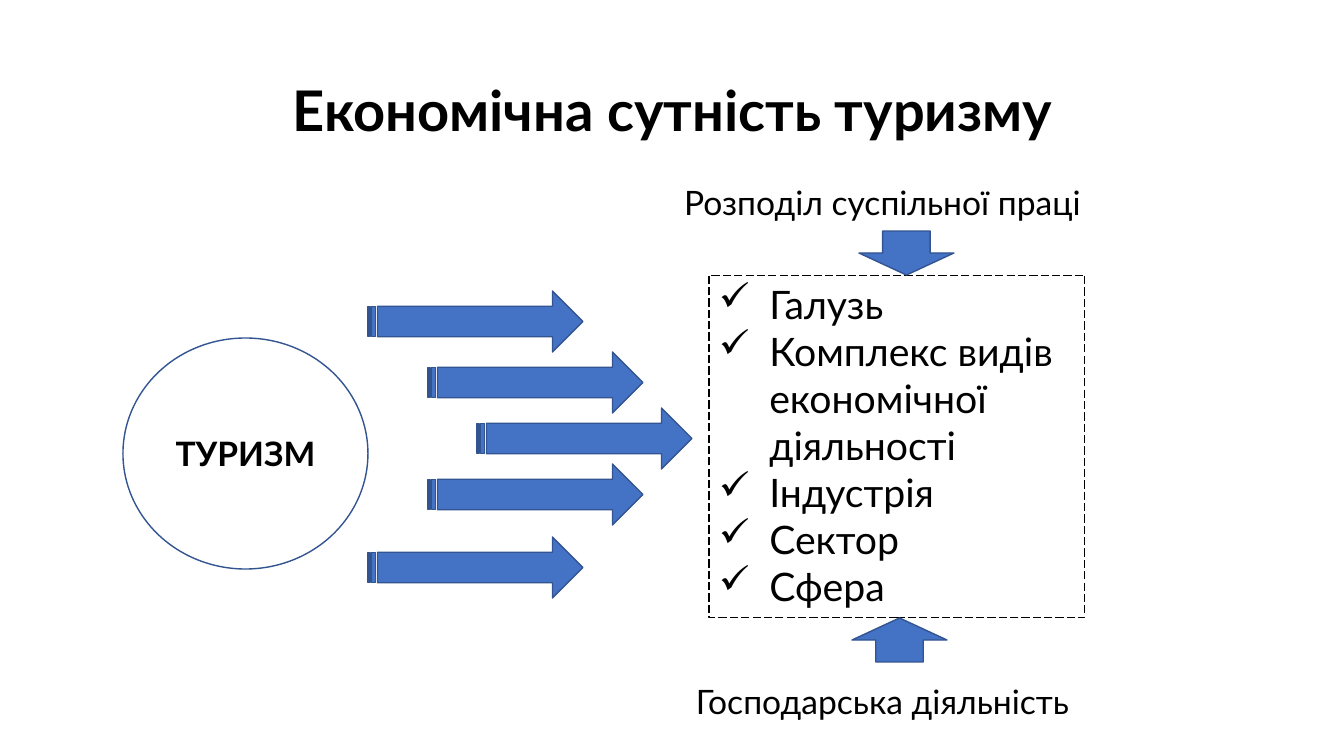
from lxml.etree import SubElement
from pptx import Presentation
from pptx.dml.color import RGBColor
from pptx.enum.dml import MSO_LINE
from pptx.enum.shapes import MSO_SHAPE as SHAPE
from pptx.enum.text import MSO_ANCHOR as ANCHOR, MSO_AUTO_SIZE as FIT, PP_ALIGN as ALIGN
from pptx.oxml.ns import qn
from pptx.util import Pt

PX = 914400 / 100.8
FONT = "Lato"
BLACK = RGBColor(0x00, 0x00, 0x00)
WHITE = RGBColor(0xFF, 0xFF, 0xFF)
BLUE = RGBColor(0x44, 0x72, 0xC4)
NAVY = RGBColor(0x32, 0x54, 0x91)

ARROWS = [(368, 291), (428, 352), (477, 408), (428, 464), (368, 537)]
FORMS = ["Галузь", "Комплекс видів економічної діяльності", "Індустрія", "Сектор", "Сфера"]


def px(*nums):
    return [round(n * PX) for n in nums]


def write(frame, lines, size, bold=False, align=ALIGN.CENTER, anchor=ANCHOR.MIDDLE):
    frame.text = "\n".join(lines)
    frame.word_wrap = True
    frame.vertical_anchor = anchor
    for para in frame.paragraphs:
        para.alignment = align
        for run in para.runs:
            font = run.font
            font.name, font.size, font.bold = FONT, Pt(size), bold
            font.color.rgb = BLACK


def add_title(slide, text, box):
    title = slide.shapes.title
    title.left, title.top, title.width, title.height = px(*box)
    write(title.text_frame, [text], 40, bold=True)
    title.text_frame.paragraphs[0].line_spacing = 0.9


def add_form(slide, kind, box, fill=BLUE, line=NAVY, width=1):
    form = slide.shapes.add_shape(kind, *px(*box))
    form.shadow.inherit = False
    if fill is None:
        form.fill.background()
    else:
        form.fill.solid()
        form.fill.fore_color.rgb = fill
    form.line.color.rgb = line
    form.line.width = Pt(width)
    return form


def add_label(slide, text, box):
    frame = slide.shapes.add_textbox(*px(*box)).text_frame
    write(frame, [text], 24, anchor=ANCHOR.TOP)
    frame.auto_size = FIT.SHAPE_TO_FIT_TEXT


def add_ticks(frame):
    """Give each paragraph a tick bullet with a hanging indent."""
    for para in frame.paragraphs:
        props = para._p.get_or_add_pPr()
        props.set("marL", "457200")
        props.set("indent", "-457200")
        SubElement(props, qn("a:buChar")).set("char", "✓")


def add_list(slide, items, box):
    form = add_form(slide, SHAPE.RECTANGLE, box, fill=None, line=BLACK, width=0.75)
    form.line.dash_style = MSO_LINE.LONG_DASH
    write(form.text_frame, items, 28, align=ALIGN.LEFT, anchor=ANCHOR.TOP)
    form.text_frame.auto_size = FIT.SHAPE_TO_FIT_TEXT
    add_ticks(form.text_frame)


def main():
    deck = Presentation()
    deck.slide_width, deck.slide_height = px(1344, 756)
    slide = deck.slides.add_slide(deck.slide_layouts[5])

    add_title(slide, "Економічна сутність туризму", (93, 40, 1159, 146))
    circle = add_form(slide, SHAPE.OVAL, (123, 338, 245, 231), fill=WHITE)
    write(circle.text_frame, ["ТУРИЗМ"], 24, bold=True)
    for left, top in ARROWS:
        add_form(slide, SHAPE.STRIPED_RIGHT_ARROW, (left, top, 215, 61))

    add_list(slide, FORMS, (709, 275, 376, 343))
    add_form(slide, SHAPE.DOWN_ARROW, (859, 231, 95, 44))
    rise = add_form(slide, SHAPE.DOWN_ARROW, (852, 618, 95, 44))
    rise.rotation = 180
    add_label(slide, "Господарська діяльність", (642, 676, 481, 50))
    add_label(slide, "Розподіл суспільної праці", (642, 177, 481, 50))
    deck.save("out.pptx")


if __name__ == "__main__":
    main()
